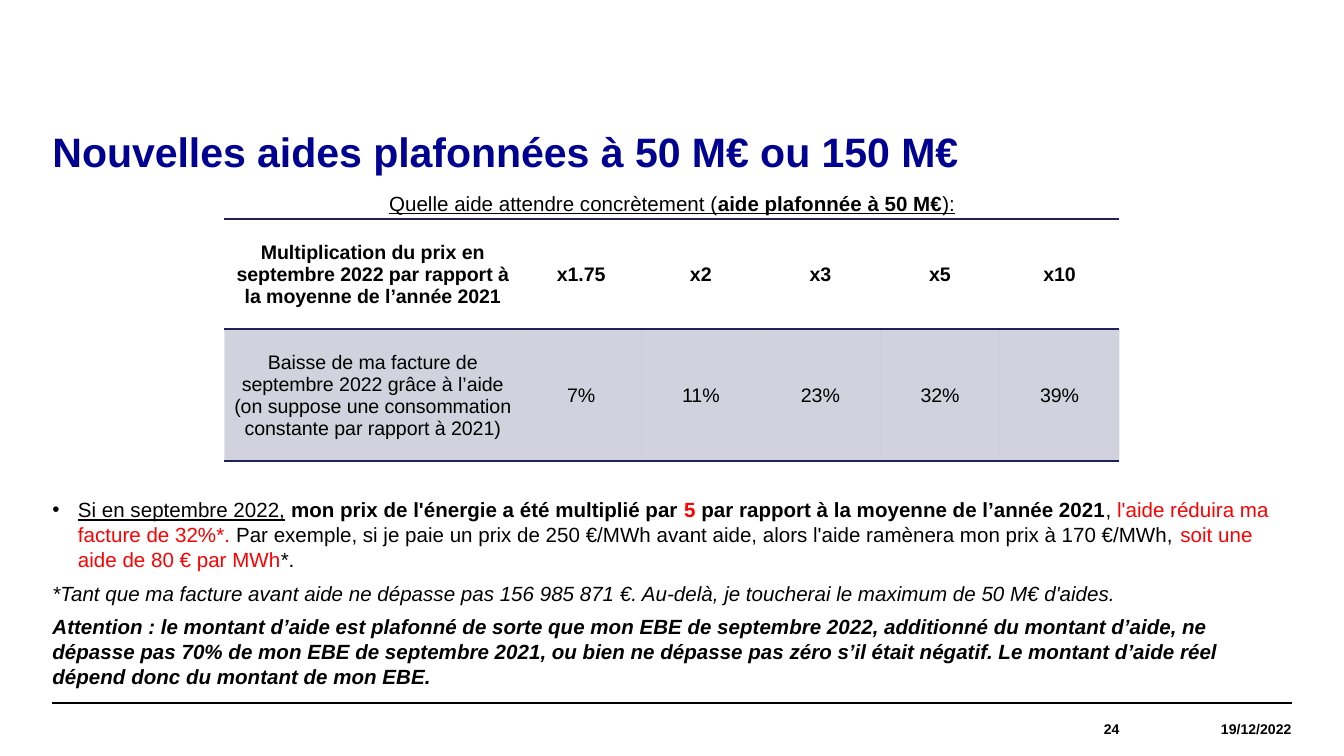
from dataclasses import dataclass

from lxml.etree import SubElement
from pptx import Presentation
from pptx.dml.color import RGBColor
from pptx.enum.shapes import MSO_CONNECTOR
from pptx.enum.text import MSO_ANCHOR, PP_ALIGN
from pptx.oxml import parse_xml
from pptx.oxml.ns import nsdecls, qn
from pptx.slide import Slide
from pptx.table import _Cell
from pptx.text.text import TextFrame
from pptx.util import Inches, Pt

COLORS = {"title": "000091", "ink": "000000", "accent": "FF0000", "grid": "21215A"}
FONT = "Arial"
MARGIN = 0.39
CONTENT_WIDTH = 9.22
SLIDE_WIDTH = Inches(10)
SLIDE_HEIGHT = SLIDE_WIDTH * 9 // 16


@dataclass(frozen=True)
class Span:
    text: str
    color: str = "ink"
    bold: bool = False
    italic: bool = False
    underline: bool = False


@dataclass(frozen=True)
class Line:
    spans: tuple[Span, ...]
    bullet: bool = False


@dataclass(frozen=True)
class Multiple:
    label: str
    saving: str


CAPTION = Line((
    Span("Quelle aide attendre concrètement (", underline=True),
    Span("aide plafonnée à 50 M€", bold=True, underline=True),
    Span("):", underline=True),
))

EXPLANATION = (
    Line((
        Span("Si en septembre 2022,", underline=True),
        Span(" "),
        Span("mon prix de l'énergie a été multiplié par ", bold=True),
        Span("5", color="accent", bold=True),
        Span(" par rapport à la moyenne de l’année 2021", bold=True),
        Span(", "),
        Span("l'aide réduira ma facture de 32%*. ", color="accent"),
        Span("Par exemple, si je paie un prix de 250 €/MWh avant aide, "
             "alors l'aide ramènera mon prix à 170 €/MWh, "),
        Span("soit une aide de 80 € par MWh", color="accent"),
        Span("*."),
    ), bullet=True),
    Line((Span("*Tant que ma facture avant aide ne dépasse pas 156 985 871 €. "
               "Au-delà, je toucherai le maximum de 50 M€ d'aides.", italic=True),)),
    Line((Span("Attention : le montant d’aide est plafonné de sorte que mon EBE de "
               "septembre 2022, additionné du montant d’aide, ne dépasse pas 70% de mon "
               "EBE de septembre 2021, ou bien ne dépasse pas zéro s’il était négatif. "
               "Le montant d’aide réel dépend donc du montant de mon EBE.",
               bold=True, italic=True),)),
)

PRICE_LABEL = (
    "Multiplication du prix en septembre 2022 par rapport à la moyenne de l’année 2021",
)
SAVING_LABEL = (
    "Baisse de ma facture de septembre 2022 grâce à l’aide",
    "(on suppose une consommation constante par rapport à 2021)",
)
MULTIPLES = (
    Multiple("x1.75", "7%"),
    Multiple("x2", "11%"),
    Multiple("x3", "23%"),
    Multiple("x5", "32%"),
    Multiple("x10", "39%"),
)


def write_text(frame: TextFrame, lines: tuple[Line, ...], *, size: float,
               align: PP_ALIGN = PP_ALIGN.LEFT, spacing: float = 1.0,
               after: float = 0) -> None:
    frame.word_wrap = True
    for index, line in enumerate(lines):
        paragraph = frame.paragraphs[0] if index == 0 else frame.add_paragraph()
        paragraph.alignment = align
        paragraph.line_spacing = spacing
        paragraph.space_after = Pt(after)
        if line.bullet:
            properties = paragraph._p.get_or_add_pPr()
            properties.set("marL", str(Inches(0.19)))
            properties.set("indent", str(Inches(-0.19)))
            SubElement(properties, qn("a:buFont"), typeface=FONT)
            SubElement(properties, qn("a:buChar"), char="•")
        for span in line.spans:
            run = paragraph.add_run()
            run.text = span.text
            run.font.name = FONT
            run.font.size = Pt(size)
            run.font.bold = span.bold
            run.font.italic = span.italic
            run.font.underline = span.underline
            run.font.color.rgb = RGBColor.from_string(COLORS[span.color])


def add_frame(slide: Slide, left: float, top: float, width: float, height: float,
              anchor: MSO_ANCHOR = MSO_ANCHOR.TOP) -> TextFrame:
    frame = slide.shapes.add_textbox(
        Inches(left), Inches(top), Inches(width), Inches(height)).text_frame
    frame.margin_left = frame.margin_right = Inches(0)
    frame.margin_top = frame.margin_bottom = Inches(0)
    frame.vertical_anchor = anchor
    return frame


def style_cell(cell: _Cell, shaded: bool) -> None:
    cell.vertical_anchor = MSO_ANCHOR.MIDDLE
    cell.margin_left = cell.margin_right = cell.margin_top = Inches(0.01)
    cell.margin_bottom = Inches(0)
    if shaded:
        cell.fill.solid()
        cell.fill.fore_color.rgb = RGBColor.from_string(COLORS["grid"])
        tint = cell._tc.tcPr.find(qn("a:solidFill"))[0]
        SubElement(tint, qn("a:alpha"), val="20000")
    else:
        cell.fill.background()
    rule = f'<a:solidFill><a:srgbClr val="{COLORS["grid"]}"/></a:solidFill>'
    edges = {"lnL": "<a:noFill/>", "lnR": "<a:noFill/>", "lnT": rule, "lnB": rule}
    for position, (edge, paint) in enumerate(edges.items()):
        cell._tc.tcPr.insert(position, parse_xml(
            f'<a:{edge} {nsdecls("a")} w="{Pt(1)}">{paint}</a:{edge}>'))


def add_savings_table(slide: Slide) -> None:
    rows = (
        (PRICE_LABEL, *((multiple.label,) for multiple in MULTIPLES)),
        (SAVING_LABEL, *((multiple.saving,) for multiple in MULTIPLES)),
    )
    table = slide.shapes.add_table(
        len(rows), len(rows[0]), Inches(1.67), Inches(1.63), Inches(6.66), Inches(1.8)).table
    table.first_row = table.horz_banding = False
    for index, column in enumerate(table.columns):
        column.width = Inches(0.89 if index else 2.21)
    for row, height in zip(table.rows, (0.82, 0.98)):
        row.height = Inches(height)
    for row_index, row in enumerate(rows):
        header = row_index == 0
        for column_index, texts in enumerate(row):
            cell = table.cell(row_index, column_index)
            style_cell(cell, shaded=not header)
            lines = tuple(Line((Span(text, bold=header),)) for text in texts)
            write_text(cell.text_frame, lines, size=10.5, align=PP_ALIGN.CENTER)


def add_footer(slide: Slide) -> None:
    rule = slide.shapes.add_connector(
        MSO_CONNECTOR.STRAIGHT, Inches(MARGIN), Inches(5.23),
        Inches(MARGIN + CONTENT_WIDTH), Inches(5.23))
    rule.line.color.rgb = RGBColor.from_string(COLORS["ink"])
    rule.line.width = Pt(0.8)
    SubElement(rule._element.spPr, qn("a:effectLst"))
    for text, left, width in (("24", 6.85, 1.48), ("19/12/2022", 8.33, 1.28)):
        frame = add_frame(slide, left, 5.23, width, 0.39, MSO_ANCHOR.MIDDLE)
        write_text(frame, (Line((Span(text, bold=True),)),), size=7.5, align=PP_ALIGN.RIGHT)


def main() -> None:
    presentation = Presentation()
    presentation.slide_width = SLIDE_WIDTH
    presentation.slide_height = SLIDE_HEIGHT
    slide = presentation.slides.add_slide(presentation.slide_layouts[6])

    title = Line((Span("Nouvelles aides plafonnées à 50 M€ ou 150 M€",
                       color="title", bold=True),))
    write_text(add_frame(slide, MARGIN, 0.98, CONTENT_WIDTH, 0.4), (title,),
               size=22, spacing=0.9)
    write_text(add_frame(slide, MARGIN, 1.42, CONTENT_WIDTH, 0.2), (CAPTION,),
               size=11, align=PP_ALIGN.CENTER)
    add_savings_table(slide)
    write_text(add_frame(slide, MARGIN, 3.7, CONTENT_WIDTH, 1.53), EXPLANATION,
               size=11, after=5)
    add_footer(slide)
    presentation.save("out.pptx")


if __name__ == "__main__":
    main()
